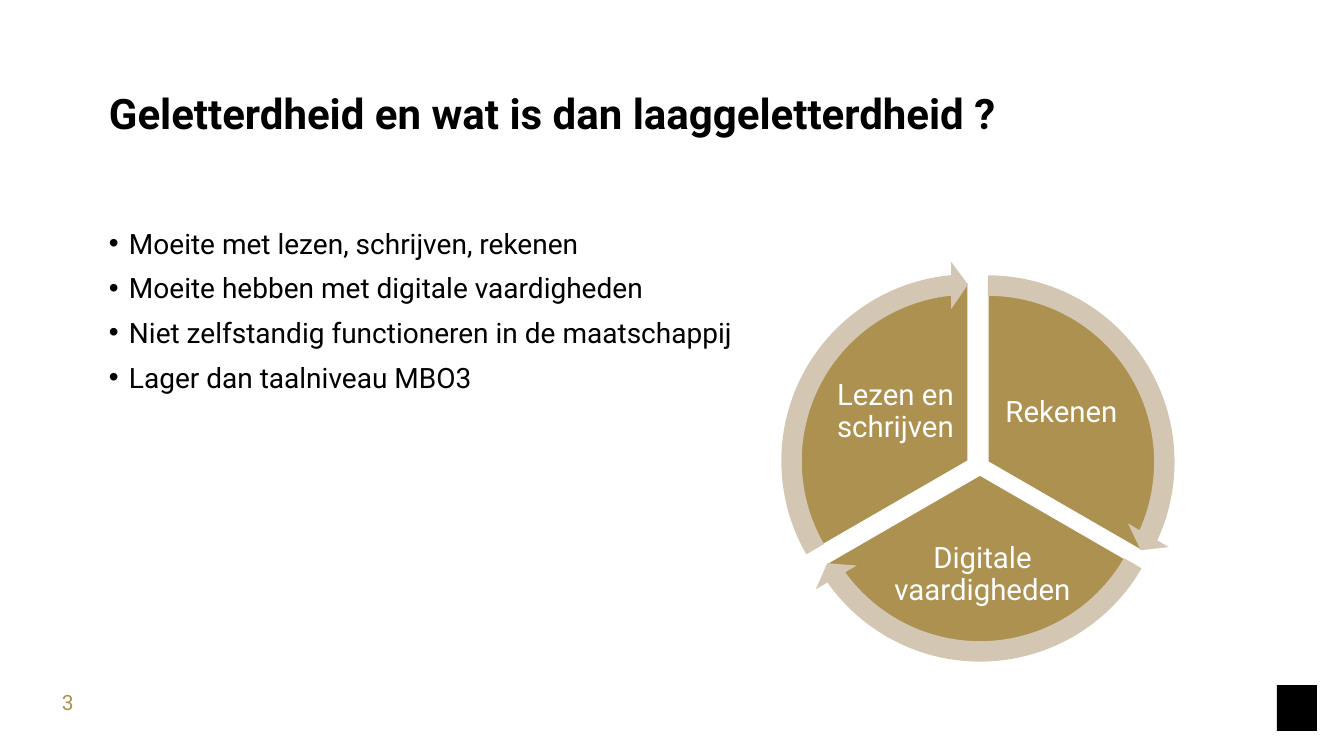
"""Build a slide on literacy: a bullet list beside a three-part cycle."""
from dataclasses import dataclass

from lxml.etree import SubElement
from pptx import Presentation
from pptx.dml.color import RGBColor
from pptx.enum.shapes import MSO_SHAPE
from pptx.enum.text import MSO_ANCHOR, PP_ALIGN
from pptx.oxml.ns import qn
from pptx.util import Pt

TITLE = "Geletterdheid en wat is dan laaggeletterdheid ?"
BULLETS = [
    "Moeite met lezen, schrijven, rekenen",
    "Moeite hebben met digitale vaardigheden",
    "Niet zelfstandig functioneren in de maatschappij",
    "Lager dan taalniveau MBO3",
]
PAGE = "3"
SECTORS = [
    {"label": "Rekenen", "pie": (810, 284), "angles": (162, 18),
     "arrow": (14.73, 161.99), "box": (998, 360, 127, 106)},
    {"label": "Digitale vaardigheden", "pie": (802, 297), "angles": (18, 90),
     "arrow": (86.72, 18), "box": (887, 528, 191, 94)},
    {"label": "Lezen en schrijven", "pie": (790, 283), "angles": (90, 162),
     "arrow": (158.73, 90), "box": (832, 359, 127, 106)},
]

SLIDE_W, SLIDE_H = 1344, 756
PIE, RING = 356, 22
INDENT = 20
PAD = 3
EMU_PER_PX = 914400 / 100.8


@dataclass(frozen=True)
class Theme:
    font: str = "Roboto"
    black: str = "000000"
    white: str = "FFFFFF"
    gold: str = "AD9150"
    sand: str = "D3C7B3"
    title: int = 30
    body: int = 20
    label: int = 21
    page: int = 15


T = Theme()


def px(n):
    return round(n * EMU_PER_PX)


def add_text(slide, box, lines, size, color, bold=False, pad=0):
    tf = slide.shapes.add_textbox(*map(px, box)).text_frame
    tf.word_wrap = True
    tf.margin_left = tf.margin_right = tf.margin_top = tf.margin_bottom = px(pad)
    tf.text = "\n".join(lines)
    for p in tf.paragraphs:
        f = p.runs[0].font
        f.name, f.size, f.bold = T.font, Pt(size), bold
        f.color.rgb = RGBColor.from_string(color)
    return tf


def add_bullets(slide, box, lines):
    for p in add_text(slide, box, lines, T.body, T.black).paragraphs:
        p.line_spacing = 1.33
        pPr = p._p.get_or_add_pPr()
        pPr.set("marL", str(px(INDENT)))
        pPr.set("indent", str(-px(INDENT)))
        SubElement(pPr, qn("a:buFont"), typeface="Arial")
        SubElement(pPr, qn("a:buChar"), char="•")


def add_shape(slide, kind, box, fill, adjustments=(), line=None):
    sp = slide.shapes.add_shape(kind, *map(px, box))
    sp.shadow.inherit = False
    sp.fill.solid()
    sp.fill.fore_color.rgb = RGBColor.from_string(fill)
    for i, value in enumerate(adjustments):
        sp.adjustments[i] = value
    if line:
        sp.line.color.rgb = RGBColor.from_string(line)
        sp.line.width = Pt(1)
    else:
        sp.line.fill.background()


def add_cycle(slide):
    for s in SECTORS:
        add_shape(slide, MSO_SHAPE.PIE, (*s["pie"], PIE, PIE), T.gold, s["angles"], T.white)
        tf = add_text(slide, s["box"], [s["label"]], T.label, T.white, pad=PAD)
        tf.vertical_anchor = MSO_ANCHOR.MIDDLE
        tf.paragraphs[0].alignment = PP_ALIGN.CENTER
        tf.paragraphs[0].line_spacing = 0.9
    for s in SECTORS:
        x, y = s["pie"]
        size = PIE + 2 * RING
        add_shape(slide, MSO_SHAPE.CIRCULAR_ARROW, (x - RING, y - RING, size, size),
                  T.sand, (0.051, 3.275, *s["arrow"], 0.059))


def main():
    prs = Presentation()
    prs.slide_width, prs.slide_height = px(SLIDE_W), px(SLIDE_H)
    slide = prs.slides.add_slide(prs.slide_layouts[6])
    add_shape(slide, MSO_SHAPE.RECTANGLE, (1277, 685, 40, 46), T.black)
    add_text(slide, (109, 88, 995, 73), [TITLE], T.title, T.black, bold=True)
    add_bullets(slide, (109, 215, 995, 242), BULLETS)
    add_text(slide, (62, 690, 84, 28), [PAGE], T.page, T.gold)
    add_cycle(slide)
    prs.save("out.pptx")


if __name__ == "__main__":
    main()
